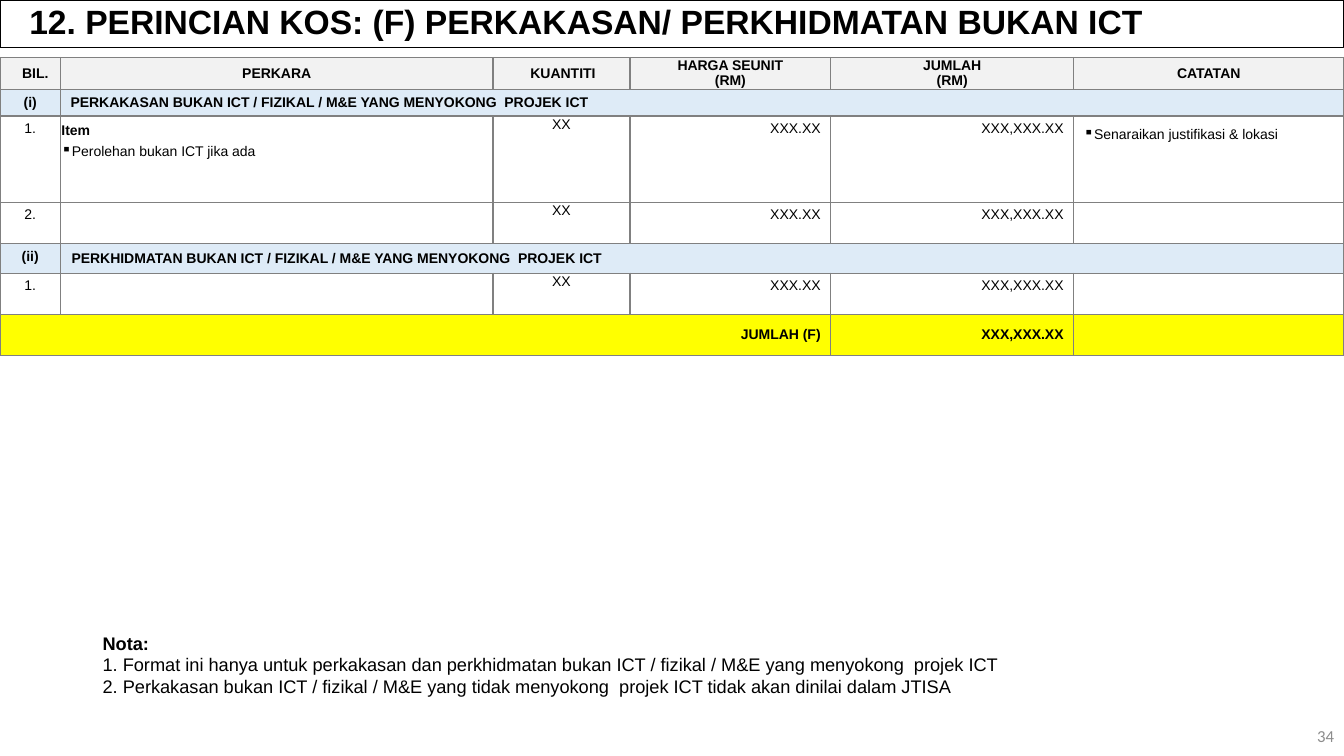
from dataclasses import dataclass
from typing import Optional

import pptx
import pptx.dml.color
import pptx.enum.text
import pptx.oxml
import pptx.oxml.ns
import pptx.util

RGB = pptx.dml.color.RGBColor
BLACK = RGB(0x00, 0x00, 0x00)
GREY = RGB(0x8C, 0x8C, 0x8C)
HEADER_GREY = RGB(0xF2, 0xF2, 0xF2)
SECTION_BLUE = RGB(0xDE, 0xEB, 0xF7)
TOTAL_YELLOW = RGB(0xFF, 0xFF, 0x00)
BORDER_GREY = RGB(0x80, 0x80, 0x80)

LEFT = pptx.enum.text.PP_ALIGN.LEFT
CENTER = pptx.enum.text.PP_ALIGN.CENTER
RIGHT = pptx.enum.text.PP_ALIGN.RIGHT
TOP = pptx.enum.text.MSO_ANCHOR.TOP
MIDDLE = pptx.enum.text.MSO_ANCHOR.MIDDLE

SLIDE_WIDTH = pptx.util.Inches(13.33)
SLIDE_HEIGHT = pptx.util.Inches(7.5)
# Percentages of the slide's width and height
COLUMNS = (4.5, 32.18, 10.2, 14.93, 18.08, 20.11)
ROWS = (4.27, 3.47, 11.4, 5.47, 3.93, 5.47, 5.2)
TABLE_TOP = 7.6

PADDED = (0.1, 0.05)
TIGHT = (0.01, 0.01)
ITEM_SPACING = pptx.util.Pt(15.1)


@dataclass
class Entry:
    row: int
    column: int
    text: str
    align: pptx.enum.text.PP_ALIGN = LEFT
    bold: bool = False
    anchor: pptx.enum.text.MSO_ANCHOR = TOP
    margins: tuple[float, float] = PADDED
    span: int = 1
    indent: float = 0
    hanging: float = 0
    spacing: Optional[float] = None
    bullet: str = ""


def across(percent: float) -> int:
    return round(SLIDE_WIDTH * percent / 100)


def down(percent: float) -> int:
    return round(SLIDE_HEIGHT * percent / 100)


def write(frame, text: str, *, size: float = 10, bold: bool = False,
          font: str = "Arial", color: RGB = BLACK, align=LEFT,
          indent: float = 0, hanging: float = 0,
          spacing: Optional[float] = None, bullet: str = "") -> None:
    """Fill the first free paragraph of the frame, or add one."""
    paragraph = frame.paragraphs[-1]
    if paragraph.runs:
        paragraph = frame.add_paragraph()
    paragraph.alignment = align
    if spacing is not None:
        paragraph.line_spacing = spacing
    properties = paragraph._p.get_or_add_pPr()
    properties.set("marL", str(pptx.util.Inches(indent)))
    properties.set("indent", str(pptx.util.Inches(hanging)))
    if bullet:
        mark = pptx.oxml.parse_xml(
            f'<a:buChar {pptx.oxml.ns.nsdecls("a")} char="{bullet}"/>')
        properties.append(mark)
    run = paragraph.add_run()
    run.text = text
    run.font.size = pptx.util.Pt(size)
    run.font.bold = bold
    run.font.name = font
    run.font.color.rgb = color


def style_cell(cell, fill: Optional[RGB]) -> None:
    properties = cell._tc.get_or_add_tcPr()
    for side in ("lnL", "lnR", "lnT", "lnB"):
        properties.append(pptx.oxml.parse_xml(
            f'<a:{side} {pptx.oxml.ns.nsdecls("a")} w="12700"><a:solidFill>'
            f'<a:srgbClr val="{BORDER_GREY}"/></a:solidFill></a:{side}>'))
    if fill is None:
        cell.fill.background()
    else:
        cell.fill.solid()
        cell.fill.fore_color.rgb = fill


def fill_entry(table, entry: Entry) -> None:
    cell = table.cell(entry.row, entry.column)
    if entry.span > 1:
        cell.merge(table.cell(entry.row, entry.column + entry.span - 1))
    side, edge = entry.margins
    cell.margin_left = cell.margin_right = pptx.util.Inches(side)
    cell.margin_top = cell.margin_bottom = pptx.util.Inches(edge)
    cell.vertical_anchor = entry.anchor
    for line in entry.text.split("\n"):
        write(cell.text_frame, line, bold=entry.bold, align=entry.align,
              indent=entry.indent, hanging=entry.hanging,
              spacing=entry.spacing, bullet=entry.bullet)


def cost_entries() -> list[Entry]:
    headings = (("BIL.", 0.1), ("PERKARA", 0), ("KUANTITI", 0.03),
                ("HARGA SEUNIT\n(RM)", 0), ("JUMLAH\n(RM)", 0), ("CATATAN", 0))
    entries = [Entry(0, column, text, CENTER, True, MIDDLE, (0, 0),
                     indent=indent, spacing=0.95)
               for column, (text, indent) in enumerate(headings)]
    entries += [
        # Section rows
        Entry(1, 0, "(i)", CENTER, True, MIDDLE),
        Entry(1, 1, "PERKAKASAN BUKAN ICT / FIZIKAL / M&E YANG MENYOKONG  PROJEK ICT",
              LEFT, True, MIDDLE, span=5),
        Entry(4, 0, "(ii)", CENTER, True),
        Entry(4, 1, "PERKHIDMATAN BUKAN ICT / FIZIKAL / M&E YANG MENYOKONG  PROJEK ICT",
              LEFT, True, MIDDLE, TIGHT, span=5, hanging=0.1),
        # Descriptions
        Entry(2, 1, "Item", LEFT, True, margins=TIGHT, spacing=ITEM_SPACING),
        Entry(2, 1, "Perolehan bukan ICT jika ada", margins=TIGHT, indent=0.1,
              hanging=-0.1, spacing=ITEM_SPACING, bullet="▪"),
        Entry(2, 5, "Senaraikan justifikasi & lokasi", indent=0.1,
              hanging=-0.1, spacing=ITEM_SPACING, bullet="▪"),
        # Total row
        Entry(6, 0, "JUMLAH (F)", RIGHT, True, MIDDLE, span=4),
        Entry(6, 4, "XXX,XXX.XX", RIGHT, True, MIDDLE),
    ]
    for row, number in ((2, "1."), (3, "2."), (5, "1.")):
        entries += [Entry(row, 0, number, CENTER),
                    Entry(row, 2, "XX", CENTER, margins=TIGHT),
                    Entry(row, 3, "XXX.XX", RIGHT),
                    Entry(row, 4, "XXX,XXX.XX", RIGHT)]
    return entries


def add_cost_table(slide) -> None:
    costs = slide.shapes.add_table(len(ROWS), len(COLUMNS), 0, down(TABLE_TOP),
                                   SLIDE_WIDTH, down(sum(ROWS))).table
    costs.first_row = costs.horz_banding = False
    for column, share in zip(costs.columns, COLUMNS):
        column.width = across(share)
    for row, share in zip(costs.rows, ROWS):
        row.height = down(share)
    fills = {0: HEADER_GREY, 1: SECTION_BLUE, 4: SECTION_BLUE, 6: TOTAL_YELLOW}
    for row in range(len(ROWS)):
        for column in range(len(COLUMNS)):
            style_cell(costs.cell(row, column), fills.get(row))
    for entry in cost_entries():
        fill_entry(costs, entry)


def add_title(slide) -> None:
    title = slide.shapes.title
    title.left, title.top = 0, 0
    title.width, title.height = SLIDE_WIDTH, down(6.27)
    title.line.color.rgb = BLACK
    title.line.width = pptx.util.Pt(0.75)
    title.text_frame.auto_size = pptx.enum.text.MSO_AUTO_SIZE.NONE
    title.text_frame.vertical_anchor = MIDDLE
    write(title.text_frame, "12. PERINCIAN KOS: (F) PERKAKASAN/ PERKHIDMATAN BUKAN ICT",
          size=24, bold=True, indent=0.19, spacing=0.9)


def add_text_area(slide, left: float, top: float, width: float, height: float,
                  anchor=TOP):
    area = slide.shapes.add_textbox(across(left), down(top),
                                    across(width), down(height)).text_frame
    area.word_wrap = True
    area.vertical_anchor = anchor
    return area


def main() -> None:
    deck = pptx.Presentation()
    deck.slide_width, deck.slide_height = SLIDE_WIDTH, SLIDE_HEIGHT
    slide = deck.slides.add_slide(deck.slide_layouts[5])
    add_title(slide)
    add_cost_table(slide)

    # Page number
    page = add_text_area(slide, 77.5, 94.67, 22.5, 5.33, MIDDLE)
    write(page, "34", size=12, font="Calibri", color=GREY, align=RIGHT)

    # Notes under the table
    nota = add_text_area(slide, 6.9, 82.93, 69.1, 10.13)
    write(nota, "Nota:", size=13, bold=True)
    for line in (
        "1. Format ini hanya untuk perkakasan dan perkhidmatan bukan ICT / fizikal / M&E yang menyokong  projek ICT",
        "2. Perkakasan bukan ICT / fizikal / M&E yang tidak menyokong  projek ICT tidak akan dinilai dalam JTISA",
    ):
        write(nota, line, size=13)
    deck.save("out.pptx")


if __name__ == "__main__":
    main()
